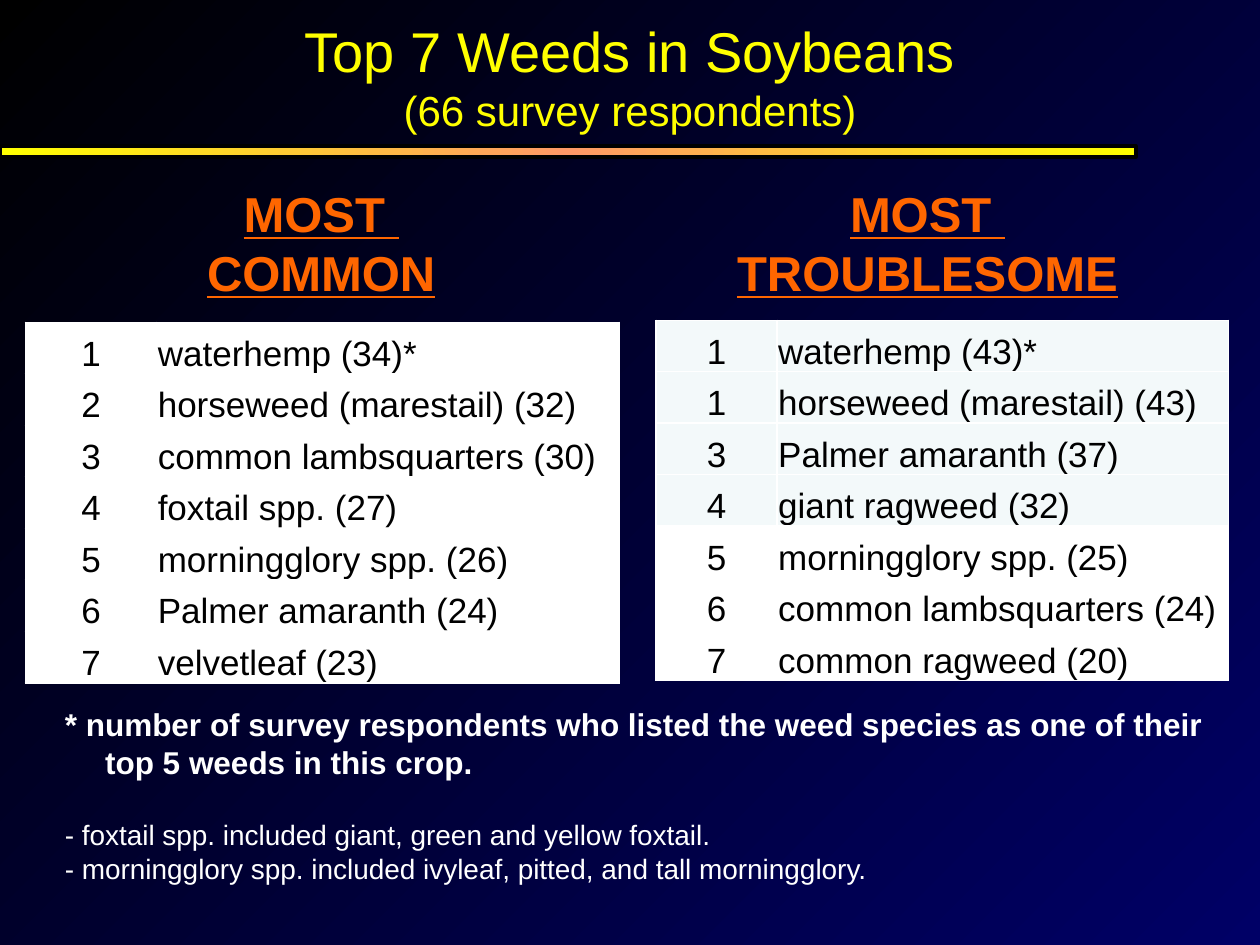
from copy import deepcopy
from pptx import Presentation
from pptx.dml.color import RGBColor
from pptx.enum.shapes import MSO_SHAPE as SHAPE
from pptx.enum.text import MSO_ANCHOR as ANCHOR, PP_ALIGN as ALIGN
from pptx.oxml import parse_xml
from pptx.oxml.ns import nsdecls, qn
from pptx.util import Pt


def rgb(color):
    return RGBColor.from_string(color)


def add_run(p, text, size, color, bold=False, underline=False):
    r = p.add_run()
    r.text = text
    r.font.name = "Arial"
    r.font.size = Pt(size)
    r.font.bold = bold
    r.font.underline = underline
    r.font.color.rgb = rgb(color)


prs = Presentation()
prs.slide_width, prs.slide_height = Pt(720), Pt(540)
s = prs.slides.add_slide(prs.slide_layouts[6])

fill = s.background.fill
fill.gradient()
fill.gradient_angle = 315
for stop, color in zip(fill.gradient_stops, ["000000", "000066"]):
    stop.color.rgb = rgb(color)

bar = s.shapes.add_shape(SHAPE.RECTANGLE, Pt(0), Pt(83.5), Pt(649), Pt(6))
bar.shadow.inherit = False
bar.line.color.rgb = rgb("000000")
bar.line.width = Pt(2.25)
bar.fill.gradient()
bar.fill.gradient_angle = 0
stops = bar._element.spPr.find(qn("a:gradFill")).find(qn("a:gsLst"))
stops.insert(1, deepcopy(stops[0]))
stops[1].set("pos", "50000")
for stop, color in zip(bar.fill.gradient_stops, ["FFFF00", "FF9966", "FFFF00"]):
    stop.color.rgb = rgb(color)

for x, w, word in [(97, 173, "COMMON"), (412.5, 235, "TROUBLESOME")]:
    tf = s.shapes.add_textbox(Pt(x), Pt(101.5), Pt(w), Pt(75)).text_frame
    tf.word_wrap = True
    for p, text in [(tf.paragraphs[0], "MOST "), (tf.add_paragraph(), word)]:
        p.alignment = ALIGN.CENTER
        add_run(p, text, 28, "FF6600", bold=True, underline=True)

common = [
    ("1", "waterhemp (34)*"),
    ("2", "horseweed (marestail) (32)"),
    ("3", "common lambsquarters (30)"),
    ("4", "foxtail spp. (27)"),
    ("5", "morningglory spp. (26)"),
    ("6", "Palmer amaranth (24)"),
    ("7", "velvetleaf (23)"),
]
troublesome = [
    ("1", "waterhemp (43)*"),
    ("1", "horseweed (marestail) (43)"),
    ("3", "Palmer amaranth (37)"),
    ("4", "giant ragweed (32)"),
    ("5", "morningglory spp. (25)"),
    ("6", "common lambsquarters (24)"),
    ("7", "common ragweed (20)"),
]
row_h = 29.45
for x, y, widths, rows, tinted in [
    (14.5, 184.2, (75, 264.5), common, 0),
    (375, 183, (69, 258), troublesome, 4),
]:
    table = s.shapes.add_table(
        len(rows), 2, Pt(x), Pt(y), Pt(sum(widths)), Pt(row_h * len(rows))
    ).table
    for column, w in zip(table.columns, widths):
        column.width = Pt(w)
    for i, row in enumerate(rows):
        table.rows[i].height = Pt(row_h)
        for j, text in enumerate(row):
            cell = table.cell(i, j)
            cell.margin_left = cell.margin_right = cell.margin_top = Pt(0.7)
            cell.margin_bottom = Pt(0)
            cell.vertical_anchor = ANCHOR.BOTTOM
            for side in "LRTB":
                cell._tc.get_or_add_tcPr().append(parse_xml(
                    f'<a:ln{side} {nsdecls("a")} w="12700"><a:solidFill>'
                    f'<a:srgbClr val="FFFFFF"/></a:solidFill></a:ln{side}>'
                ))
            cell.fill.solid()
            cell.fill.fore_color.rgb = rgb("F3F9FA" if i < tinted else "FFFFFF")
            p = cell.text_frame.paragraphs[0]
            p.alignment = ALIGN.LEFT if j else ALIGN.CENTER
            add_run(p, text, 20, "000000")

tf = s.shapes.add_textbox(Pt(24), Pt(0), Pt(672), Pt(86.5)).text_frame
tf.word_wrap = True
tf.vertical_anchor = ANCHOR.MIDDLE
for p, text, size in [
    (tf.paragraphs[0], "Top 7 Weeds in Soybeans", 32),
    (tf.add_paragraph(), "(66 survey respondents)", 24),
]:
    p.alignment = ALIGN.CENTER
    add_run(p, text, size, "FFFF00")

tf = s.shapes.add_textbox(Pt(30), Pt(399.5), Pt(666), Pt(111.5)).text_frame
tf.word_wrap = True
p = tf.paragraphs[0]
pPr = p._p.get_or_add_pPr()
pPr.set("marL", str(Pt(23)))
pPr.set("indent", str(-Pt(23)))
add_run(p, "* number of survey respondents who listed the weed species as one of "
        "their top 5 weeds in this crop.", 18, "FFFFFF", bold=True)
for gap, text in [
    (21, "- foxtail spp. included giant, green and yellow foxtail."),
    (0, "- morningglory spp. included ivyleaf, pitted, and tall morningglory."),
]:
    p = tf.add_paragraph()
    p.space_before = Pt(gap)
    add_run(p, text, 16, "FFFFFF")

prs.save("out.pptx")
